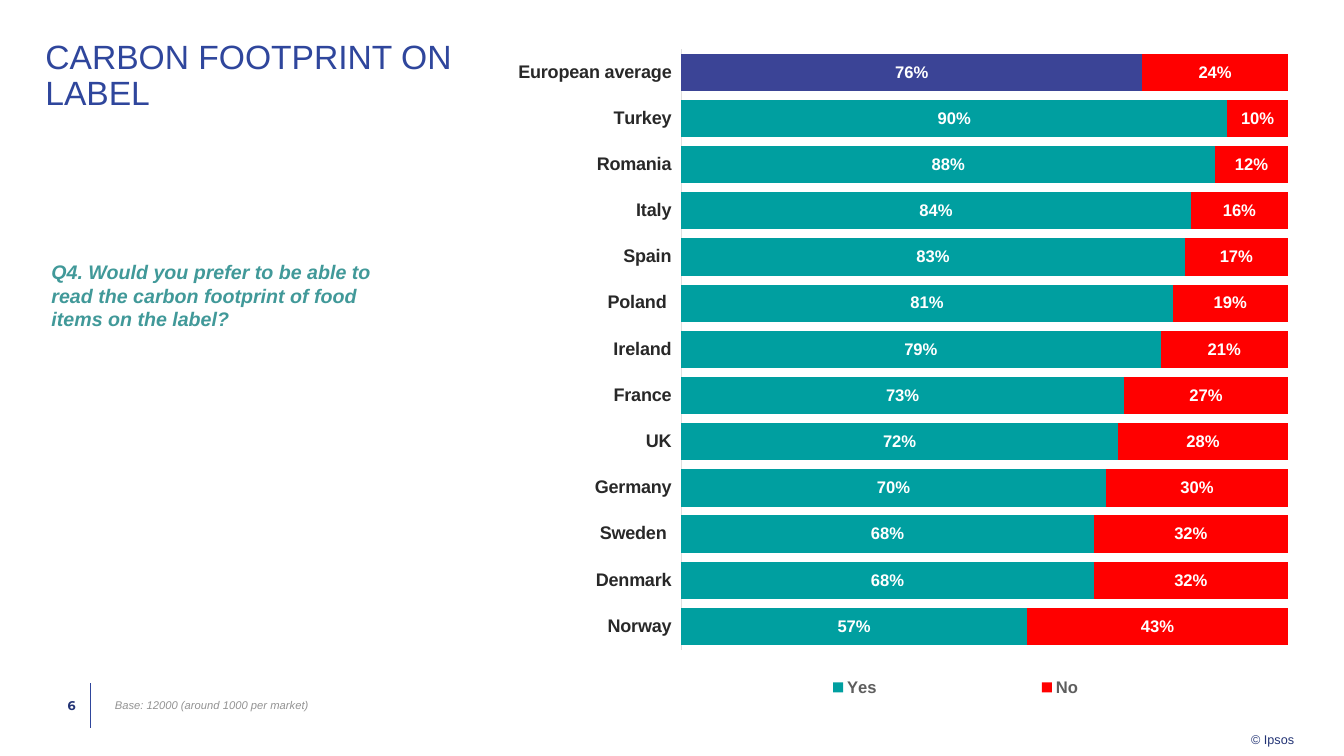
from dataclasses import dataclass, field

from lxml import etree
from pptx import Presentation
from pptx.chart.data import CategoryChartData
from pptx.dml.color import RGBColor
from pptx.enum.chart import XL_CHART_TYPE as ChartType
from pptx.enum.chart import XL_LABEL_POSITION as LabelPosition
from pptx.enum.chart import XL_LEGEND_POSITION as LegendPosition
from pptx.enum.chart import XL_TICK_LABEL_POSITION as TickLabelPosition
from pptx.enum.chart import XL_TICK_MARK as TickMark
from pptx.enum.shapes import MSO_CONNECTOR as Connector
from pptx.enum.text import MSO_ANCHOR as Anchor
from pptx.enum.text import MSO_AUTO_SIZE as AutoSize
from pptx.enum.text import PP_ALIGN as Align
from pptx.oxml.ns import qn
from pptx.util import Inches, Pt

COLORS = {
    "title": "2F469C",
    "navy": "233475",
    "question": "419999",
    "base": "939393",
    "label": "282828",
    "legend": "5E5E5E",
    "axis": "DFDFDF",
    "average": "3B4496",
    "yes": "009FA0",
    "no": "FF0000",
    "white": "FFFFFF",
}

YES_SHARES = {
    "European average": 0.76,
    "Turkey": 0.90,
    "Romania": 0.88,
    "Italy": 0.84,
    "Spain": 0.83,
    "Poland ": 0.81,
    " Ireland": 0.79,
    "France": 0.73,
    "UK": 0.72,
    "Germany": 0.70,
    "Sweden ": 0.68,
    "Denmark": 0.68,
    "Norway": 0.57,
}


@dataclass
class TextItem:
    text: str
    box: tuple[float, float, float, float]
    color: str
    font: dict
    frame: dict = field(default_factory=dict)
    paragraph: dict = field(default_factory=dict)
    insets: tuple[float, float, float, float] = (0, 0, 0, 0)


TITLE = TextItem(
    "CARBON FOOTPRINT ON LABEL", (0.45, 0.4, 4.69, 0.42), "title",
    {"size": Pt(24)}, paragraph={"line_spacing": 0.9, "alignment": Align.LEFT},
)
TEXTS = [
    TextItem("© Ipsos", (12.41, 7.22, 0.43, 0.19), "navy", {"size": Pt(9)},
             {"word_wrap": False}, insets=(0, 0.04, 0, 0)),
    TextItem("6", (0.45, 6.78, 0.45, 0.43), "navy",
             {"size": Pt(9), "bold": True, "name": "Montserrat"},
             {"vertical_anchor": Anchor.MIDDLE}, {"alignment": Align.RIGHT},
             (0, 0, 0.15, 0)),
    TextItem("Q4. Would you prefer to be able to read the carbon footprint of food items on the label?",
             (0.51, 2.58, 3.31, 0.71), "question",
             {"size": Pt(14), "bold": True, "italic": True}),
    TextItem("Base: 12000 (around 1000 per market)", (1.04, 6.78, 2.78, 0.43), "base",
             {"size": Pt(8), "italic": True}, {"vertical_anchor": Anchor.MIDDLE},
             insets=(0.1, 0.05, 0.1, 0.05)),
]


def apply(target, values: dict) -> None:
    for name, value in values.items():
        setattr(target, name, value)


def rgb(name: str) -> RGBColor:
    return RGBColor.from_string(COLORS[name])


def format_font(font, color: str, values: dict) -> None:
    apply(font, {"name": "Arial", **values})
    font.color.rgb = rgb(color)


def fill_solid(part, color: str) -> None:
    part.format.fill.solid()
    part.format.fill.fore_color.rgb = rgb(color)


def write_text(shape, item: TextItem) -> None:
    sides = ("left", "top", "width", "height")
    apply(shape, dict(zip(sides, map(Inches, item.box))))
    margins = ("margin_left", "margin_top", "margin_right", "margin_bottom")
    frame = shape.text_frame
    apply(frame, dict(zip(margins, map(Inches, item.insets))))
    apply(frame, {"word_wrap": True, "auto_size": AutoSize.NONE,
                  "vertical_anchor": Anchor.TOP, **item.frame})
    paragraph = frame.paragraphs[0]
    apply(paragraph, item.paragraph)
    run = paragraph.add_run()
    run.text = item.text
    format_font(run.font, item.color, item.font)


def set_layout(element, after: str, values: dict) -> None:
    for old in element.findall(qn("c:layout")):
        element.remove(old)
    layout = etree.Element(qn("c:layout"))
    manual = etree.SubElement(layout, qn("c:manualLayout"))
    for name, value in values.items():
        etree.SubElement(manual, qn(f"c:{name}")).set("val", str(value))
    previous = element.find(qn(after)) if after else None
    if previous is None:
        element.insert(0, layout)
    else:
        previous.addnext(layout)


def add_footprint_chart(slide) -> None:
    data = CategoryChartData(number_format="0%")
    data.categories = list(YES_SHARES)
    data.add_series("Yes", list(YES_SHARES.values()))
    data.add_series("No", [round(1 - share, 2) for share in YES_SHARES.values()])
    box = map(Inches, (5.14, 0.4, 7.75, 6.83))
    chart = slide.shapes.add_chart(ChartType.BAR_STACKED_100, *box, data).chart
    chart.has_title = False
    format_font(chart.font, "label", {"size": Pt(10)})

    plot = chart.plots[0]
    apply(plot, {"gap_width": 24, "overlap": 100, "vary_by_categories": False})
    for series, color in zip(plot.series, ("yes", "no")):
        fill_solid(series, color)
        labels = series.data_labels
        apply(labels, {"show_value": True, "position": LabelPosition.CENTER,
                       "number_format": "0%", "number_format_is_linked": False})
        format_font(labels.font, "white", {"size": Pt(12), "bold": True})
    fill_solid(plot.series[0].points[0], "average")

    countries = chart.category_axis
    apply(countries, {"reverse_order": True, "has_major_gridlines": False,
                      "major_tick_mark": TickMark.NONE, "minor_tick_mark": TickMark.NONE,
                      "tick_label_position": TickLabelPosition.LOW})
    format_font(countries.tick_labels.font, "label", {"size": Pt(13), "bold": True})
    countries.format.line.color.rgb = rgb("axis")
    countries.format.line.width = Pt(0.75)
    apply(chart.value_axis, {"visible": False, "has_major_gridlines": False,
                             "minimum_scale": 0, "maximum_scale": 1})

    chart.has_legend = True
    legend = chart.legend
    apply(legend, {"position": LegendPosition.BOTTOM, "include_in_layout": False})
    format_font(legend.font, "legend", {"size": Pt(12), "bold": True})
    edges = {"xMode": "edge", "yMode": "edge"}
    plot_area = chart.element.find(f".//{qn('c:plotArea')}")
    set_layout(plot_area, "", {"layoutTarget": "inner", **edges,
                               "x": 0.2, "y": 0.013, "w": 0.785, "h": 0.872})
    legend_element = chart.element.find(f".//{qn('c:legend')}")
    set_layout(legend_element, "c:legendPos",
               {**edges, "x": 0.19, "y": 0.91, "w": 0.73, "h": 0.06})


def add_footer_line(slide) -> None:
    ends = map(Inches, (0.9, 6.78, 0.9, 7.22))
    line = slide.shapes.add_connector(Connector.STRAIGHT, *ends)
    line.line.color.rgb = rgb("title")
    line.line.width = Pt(0.5)
    etree.SubElement(line.element.spPr, qn("a:effectLst"))


def main() -> None:
    presentation = Presentation()
    apply(presentation, {"slide_width": Inches(13.33), "slide_height": Inches(7.5)})
    slide = presentation.slides.add_slide(presentation.slide_layouts[5])
    write_text(slide.shapes.title, TITLE)
    add_footer_line(slide)
    add_footprint_chart(slide)
    for item in TEXTS:
        write_text(slide.shapes.add_textbox(0, 0, 0, 0), item)
    presentation.save("out.pptx")


if __name__ == "__main__":
    main()
